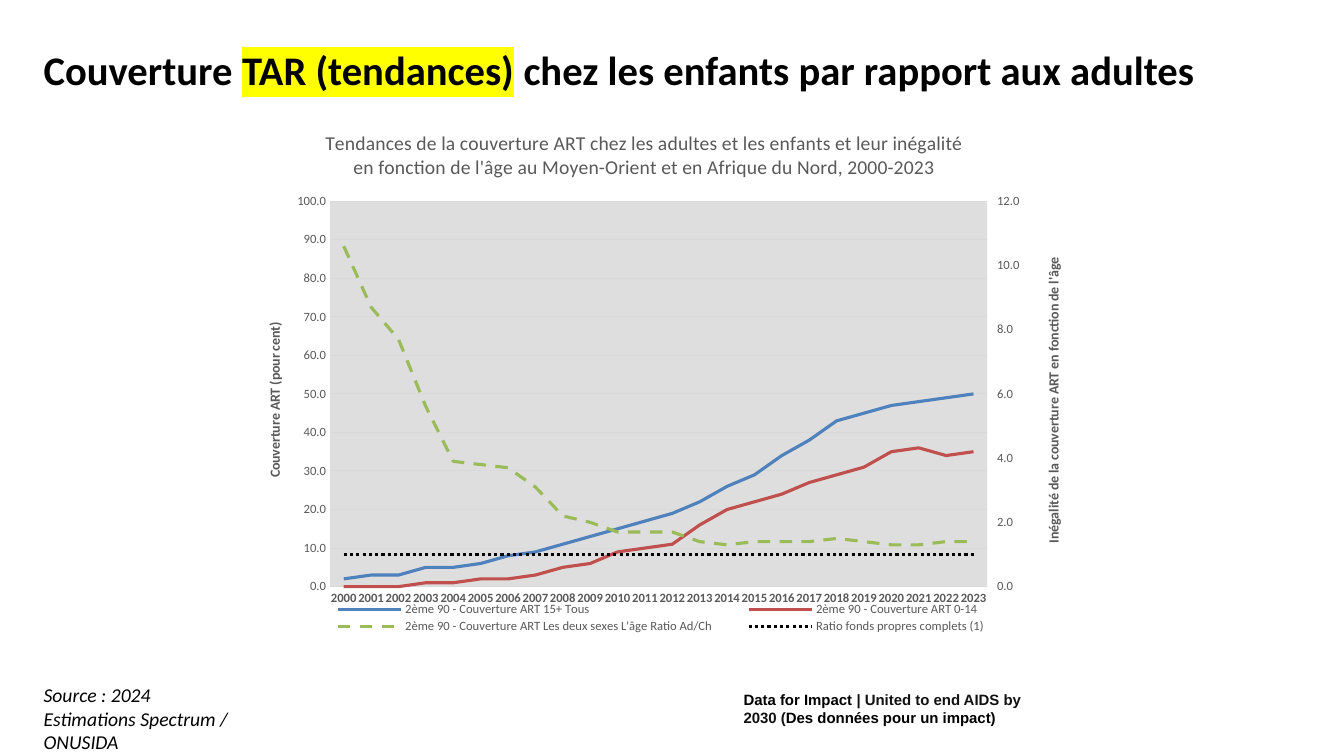
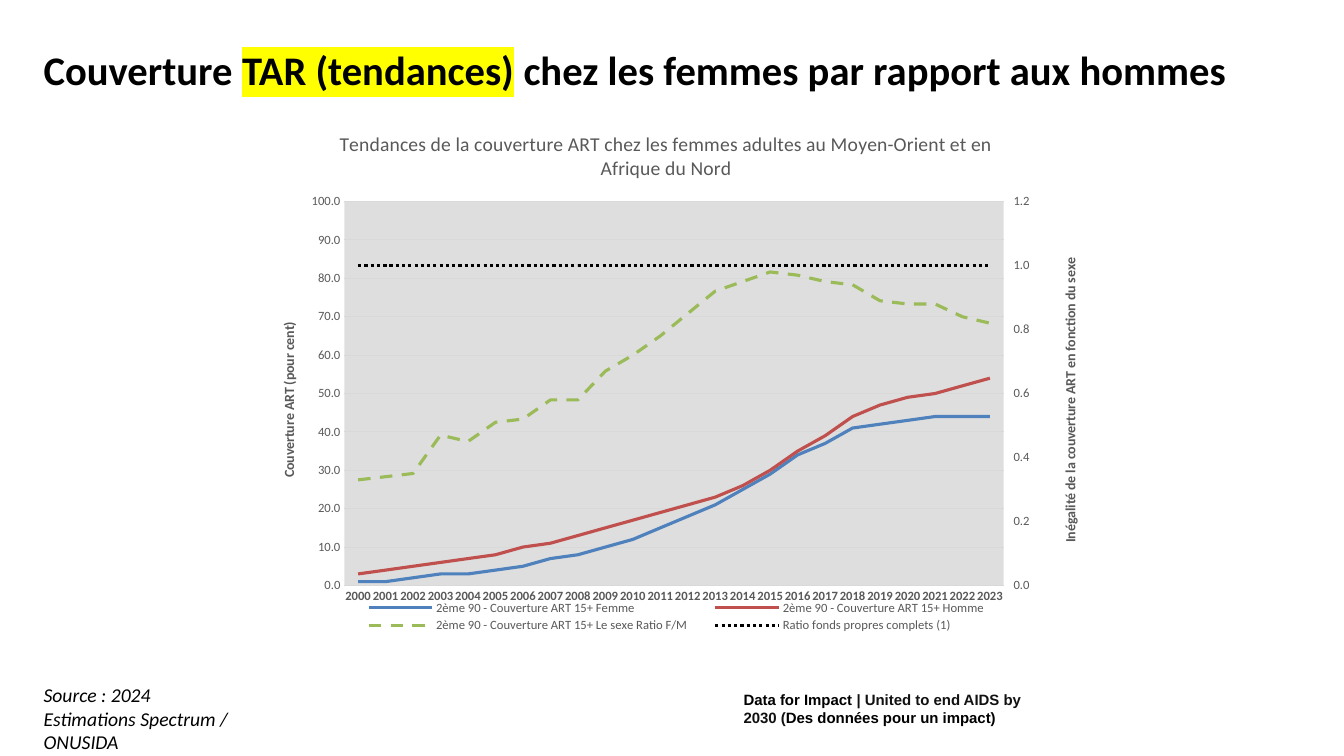
import copy

from pptx import Presentation
from pptx import util as u
from pptx.chart import axis as ax
from pptx.chart import data as chart_data
from pptx.dml.color import RGBColor
from pptx.enum import chart as ce, dml, text
from pptx.oxml import parse_xml
from pptx.oxml.ns import nsdecls, qn

COLORS = {
    "black": "000000", "ink": "111111", "grey": "595959", "grid": "D9D9D9",
    "plot": "BFBFBF", "mark": "FFFF00",
    "blue": "4F81BD", "red": "C0504D", "green": "9BBB59",
}
TITLE = {"name": "Calibri", "size": u.Pt(29), "bold": True, "color": "black"}
SOURCE = {"name": "Calibri", "size": u.Pt(14), "italic": True, "color": "black"}
FOOTER = {"name": "Arial", "size": u.Pt(10.7), "bold": True, "color": "black"}
CHART_TITLE = {"name": "Calibri", "size": u.Pt(14), "bold": False, "color": "grey"}
AXIS_TITLE = {"name": "Calibri", "size": u.Pt(10), "bold": True, "color": "grey"}
LABEL = {"name": "Calibri", "size": u.Pt(9), "bold": False, "color": "grey"}

SERIES_LINES = [
    ("blue", dml.MSO_LINE.SOLID), ("red", dml.MSO_LINE.SOLID),
    ("green", dml.MSO_LINE.DASH), ("black", dml.MSO_LINE.ROUND_DOT),
]
YEARS = [str(year) for year in range(2000, 2024)]
EQUITY = ("Ratio fonds propres complets (1)", [1] * len(YEARS))

SLIDES = [
    {
        "ending": " chez les enfants par rapport aux adultes",
        "frame": (170, 78.5, 598, 384),
        "title": "Tendances de la couverture ART chez les adultes et les enfants et leur "
                 "inégalité en fonction de l'âge au Moyen-Orient et en Afrique du Nord, 2000-2023",
        "right": "Inégalité de la couverture ART en fonction de l'âge",
        "right_max": 12, "right_step": 2, "legend": (0.08, 0.91, 0.85, 0.07),
        "series": [
            ("2ème 90 - Couverture ART 15+ Tous",
             [2, 3, 3, 5, 5, 6, 8, 9, 11, 13, 15, 17,
              19, 22, 26, 29, 34, 38, 43, 45, 47, 48, 49, 50]),
            ("2ème 90 - Couverture ART 0-14",
             [0, 0, 0, 1, 1, 2, 2, 3, 5, 6, 9, 10,
              11, 16, 20, 22, 24, 27, 29, 31, 35, 36, 34, 35]),
            ("2ème 90 - Couverture ART Les deux sexes L'âge Ratio Ad/Ch",
             [10.6, 8.7, 7.7, 5.6, 3.9, 3.8, 3.7, 3.1, 2.2, 2, 1.7, 1.7,
              1.7, 1.4, 1.3, 1.4, 1.4, 1.4, 1.5, 1.4, 1.3, 1.3, 1.4, 1.4]),
            EQUITY,
        ],
    },
    {
        "ending": " chez les femmes par rapport aux hommes",
        "frame": (180, 79, 600, 382.5),
        "title": "Tendances de la couverture ART chez les femmes adultes "
                 "au Moyen-Orient et en Afrique du Nord",
        "right": "Inégalité de la couverture ART en fonction du sexe",
        "right_max": 1.2, "right_step": 0.2, "legend": (0.11, 0.91, 0.79, 0.07),
        "series": [
            ("2ème 90 - Couverture ART 15+ Femme",
             [1, 1, 2, 3, 3, 4, 5, 7, 8, 10, 12, 15,
              18, 21, 25, 29, 34, 37, 41, 42, 43, 44, 44, 44]),
            ("2ème 90 - Couverture ART 15+ Homme",
             [3, 4, 5, 6, 7, 8, 10, 11, 13, 15, 17, 19,
              21, 23, 26, 30, 35, 39, 44, 47, 49, 50, 52, 54]),
            ("2ème 90 - Couverture ART 15+ Le sexe Ratio F/M",
             [0.33, 0.34, 0.35, 0.47, 0.45, 0.51, 0.52, 0.58, 0.58, 0.67, 0.72, 0.78,
              0.85, 0.92, 0.95, 0.98, 0.97, 0.95, 0.94, 0.89, 0.88, 0.88, 0.84, 0.82]),
            EQUITY,
        ],
    },
]


def apply_format(font, values):
    for name, value in values.items():
        if name == "color":
            font.color.rgb = RGBColor.from_string(COLORS[value])
        else:
            setattr(font, name, value)


def place(element, after, *fractions):
    """Set a chart part's x, y and optional width, height as shares of the chart."""
    old = element.find(qn("c:layout"))
    if old is not None:
        element.remove(old)
    target = '<c:layoutTarget val="inner"/>' if after is None else ""
    modes = '<c:xMode val="edge"/><c:yMode val="edge"/>'
    sizes = "".join(f'<c:{key} val="{value}"/>' for key, value in zip("xywh", fractions))
    layout = parse_xml(f'<c:layout {nsdecls("c")}><c:manualLayout>{target}{modes}{sizes}'
                       "</c:manualLayout></c:layout>")
    if after is None:
        element.insert(0, layout)
    else:
        element.find(qn(after)).addnext(layout)


deck = Presentation()
deck.slide_width, deck.slide_height = u.Pt(960), u.Pt(540)

for content in SLIDES:
    page = deck.slides.add_slide(deck.slide_layouts[6])

    # Footer, title and source: frame, anchor, base format, spans
    boxes = [
        ((524, 489.5, 220.5, 20), text.MSO_ANCHOR.TOP, FOOTER,
         [("Data for Impact ", {}), ("| United to end AIDS by 2030 (", {"color": "ink"}),
          ("Des données pour un impact)", {})]),
        ((24, 14.5, 890.5, 70), text.MSO_ANCHOR.MIDDLE, TITLE,
         [("Couverture ", {}), ("TAR (tendances)", {"highlight": "mark"}),
          (content["ending"], {})]),
        ((24, 484.5, 198, 41), text.MSO_ANCHOR.TOP, SOURCE,
         [("Source : 2024", {}), ("Estimations Spectrum / ONUSIDA", {"break": True})]),
    ]
    for frame, anchor, base, spans in boxes:
        box = page.shapes.add_textbox(*map(u.Pt, frame))
        box.text_frame.word_wrap = True
        box.text_frame.vertical_anchor = anchor
        para = box.text_frame.paragraphs[0]
        for words, changes in spans:
            changes = dict(changes)
            if changes.pop("break", False):
                para.add_line_break()
            highlight = changes.pop("highlight", None)
            span = para.add_run()
            span.text = words
            apply_format(span.font, {**base, **changes})
            if highlight:
                span.font._element.find(qn("a:solidFill")).addnext(parse_xml(
                    f'<a:highlight {nsdecls("a")}><a:srgbClr val="{COLORS[highlight]}"/>'
                    "</a:highlight>"))

    # Line chart
    data = chart_data.CategoryChartData(number_format="General")
    data.categories = YEARS
    for name, values in content["series"]:
        data.add_series(name, values)
    chart = page.shapes.add_chart(
        ce.XL_CHART_TYPE.LINE, *map(u.Pt, content["frame"]), data).chart
    apply_format(chart.font, {"name": "Calibri", "size": u.Pt(10), "color": "black"})
    plot = chart.plots[0]
    plot.vary_by_categories = False
    for series, (color, dash) in zip(plot.series, SERIES_LINES):
        series.smooth = False
        series.format.line.width = u.Pt(2.25)
        series.format.line.color.rgb = RGBColor.from_string(COLORS[color])
        series.format.line.dash_style = dash

    # Chart title and legend
    chart.has_title = True
    chart.chart_title.text_frame.text = content["title"]
    apply_format(chart.chart_title.text_frame.paragraphs[0].font, CHART_TITLE)
    place(chart.chart_title._element, "c:tx", 0.1, 0.03)
    chart.has_legend = True
    chart.legend.position = ce.XL_LEGEND_POSITION.BOTTOM
    chart.legend.include_in_layout = False
    apply_format(chart.legend.font, LABEL)
    place(chart.legend._element, "c:legendPos", *content["legend"])

    # Years and left axis
    years, left = chart.category_axis, chart.value_axis
    years.major_tick_mark = ce.XL_TICK_MARK.NONE
    apply_format(years.tick_labels.font, {**LABEL, "bold": True})
    left.has_major_gridlines = True
    for line in (years.format.line, left.major_gridlines.format.line):
        line.width = u.Pt(0.75)
        line.color.rgb = RGBColor.from_string(COLORS["grid"])

    # Second line group, on the right axis
    left_group = plot._element
    right_group = copy.deepcopy(left_group)
    left_group.addnext(right_group)
    for group, dropped in ((left_group, slice(2, None)), (right_group, slice(0, 2))):
        for series in group.findall(qn("c:ser"))[dropped]:
            group.remove(series)
    hidden_years = ax.CategoryAxis(copy.deepcopy(years._element))
    right = ax.ValueAxis(copy.deepcopy(left._element))
    left._element.addnext(hidden_years._element)
    hidden_years._element.addnext(right._element)
    for node, number in zip(right_group.findall(qn("c:axId")), ("5001", "5002")):
        node.set("val", number)
    for axis, own, other in ((hidden_years, "5001", "5002"), (right, "5002", "5001")):
        axis._element.find(qn("c:axId")).set("val", own)
        axis._element.find(qn("c:crossAx")).set("val", other)
    hidden_years.visible = False
    right.has_major_gridlines = False
    right._element.find(qn("c:axPos")).set("val", "r")
    right._element.find(qn("c:crosses")).set("val", "max")

    # Scales and titles of both value axes
    for axis, words, top, step, tick, corner in (
        (left, "Couverture ART (pour cent)", 100, 10,
         ce.XL_TICK_MARK.NONE, (0.03, 0.39)),
        (right, content["right"], content["right_max"], content["right_step"],
         ce.XL_TICK_MARK.OUTSIDE, (0.96, 0.27)),
    ):
        scale = {"minimum_scale": 0, "maximum_scale": top, "major_unit": step,
                 "major_tick_mark": tick, "has_title": True}
        for name, value in scale.items():
            setattr(axis, name, value)
        axis.format.line.fill.background()
        axis.tick_labels.number_format = "0.0"
        axis.tick_labels.number_format_is_linked = False
        apply_format(axis.tick_labels.font, LABEL)
        frame = axis.axis_title.text_frame
        frame.text = words
        apply_format(frame.paragraphs[0].font, AXIS_TITLE)
        frame._txBody.find(qn("a:bodyPr")).set("rot", "-5400000")
        frame._txBody.find(qn("a:bodyPr")).set("vert", "horz")
        place(axis.axis_title._element, "c:tx", *corner)

    # Half-transparent plot background
    plot_area = left_group.getparent()
    place(plot_area, None, 0.11, 0.17, 0.785, 0.717)
    plot_area.append(parse_xml(
        f'<c:spPr {nsdecls("c", "a")}><a:solidFill><a:srgbClr val="{COLORS["plot"]}">'
        '<a:alpha val="50000"/></a:srgbClr></a:solidFill></c:spPr>'))

deck.save("out.pptx")
